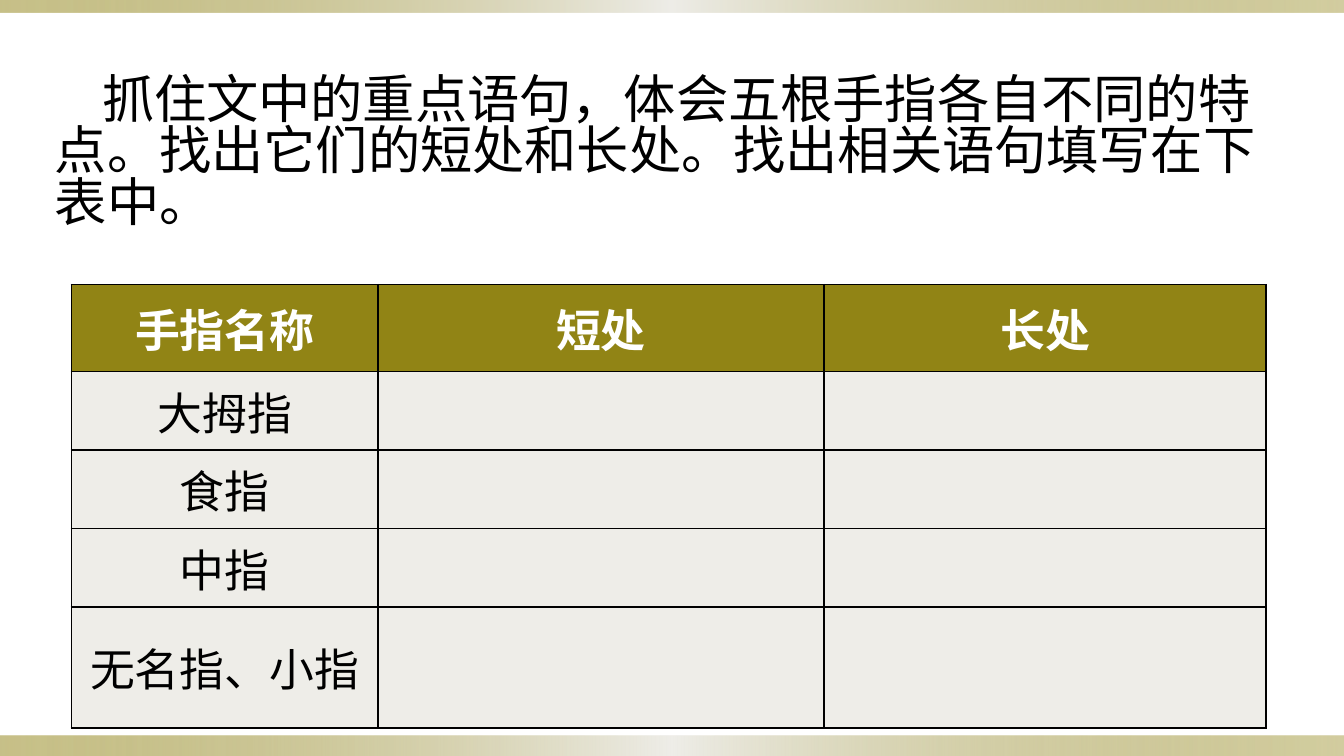
from pptx import Presentation
from pptx.dml.color import RGBColor
from pptx.enum.shapes import MSO_SHAPE as Shape
from pptx.enum.text import MSO_ANCHOR as Anchor, PP_ALIGN as Align
from pptx.oxml import parse_xml
from pptx.oxml.ns import nsdecls
from pptx.util import Cm, Pt

COLORS = {"olive": "918415", "pale": "EEEDE8", "ink": "000000", "white": "FFFFFF"}
CJK_FONT = "Noto Sans CJK SC"
TABLE_FONT = "Karla"
PAGE_WIDTH, PAGE_HEIGHT = 25.4, 14.29

TASK = "抓住文中的重点语句，体会五根手指各自不同的特点。找出它们的短处和长处。找出相关语句填写在下表中。"
ROWS = [
    ["手指名称", "短处", "长处"],
    ["大拇指", "", ""],
    ["食指", "", ""],
    ["中指", "", ""],
    ["无名指、小指", "", ""],
]
COLUMN_WIDTHS = [5.79, 8.43, 8.36]
ROW_HEIGHTS = [1.64, 1.48, 1.48, 1.48, 2.29]


def write_text(para, text, size=24, font=CJK_FONT, color="ink", bold=False,
               align=Align.LEFT, spacing=None):
    para.alignment = align
    if spacing:
        para.line_spacing = spacing
    span = para.add_run()
    span.text = text
    span.font.size = Pt(size)
    span.font.name = font
    span.font.bold = bold
    span.font.color.rgb = RGBColor.from_string(COLORS[color])
    span.font._element.append(
        parse_xml(f'<a:ea {nsdecls("a")} typeface="{CJK_FONT}"/>'))


class SlideBuilder:
    def __init__(self, page):
        self.page = page
        self.border_color = COLORS["ink"]
        self.border_width = Pt(1)

    def band(self, top, height):
        """Full-width bar that fades to pale in the middle."""
        bar = self.page.shapes.add_shape(
            Shape.RECTANGLE, 0, Cm(top), Cm(PAGE_WIDTH), Cm(height))
        bar.shadow.inherit = False
        bar.line.fill.background()
        bar.fill.background()
        stops = "".join(
            f'<a:gs pos="{place * 1000}"><a:srgbClr val="{COLORS[color]}">'
            f'<a:alpha val="{alpha * 1000}"/></a:srgbClr></a:gs>'
            for place, color, alpha in
            [(0, "olive", 50), (50, "pale", 100), (100, "olive", 40)])
        gradient = parse_xml(
            f'<a:gradFill {nsdecls("a")} rotWithShape="1"><a:gsLst>{stops}</a:gsLst>'
            '<a:lin ang="0" scaled="0"/></a:gradFill>')
        properties = bar._element.spPr
        properties.replace(properties.find("{*}noFill"), gradient)

    def paragraph_box(self, text, left, top, width, height, indent):
        box = self.page.shapes.add_textbox(Cm(left), Cm(top), Cm(width), Cm(height))
        frame = box.text_frame
        frame.word_wrap = True
        frame.margin_top, frame.margin_bottom = Cm(0.24), 0
        para = frame.paragraphs[0]
        para._p.get_or_add_pPr().set("indent", str(Cm(indent)))
        write_text(para, text, size=28, spacing=0.82)

    def table(self, rows, left, top, widths, heights):
        grid = self.page.shapes.add_table(
            len(rows), len(widths), Cm(left), Cm(top),
            Cm(sum(widths)), Cm(sum(heights))).table
        for column, width in zip(grid.columns, widths):
            column.width = Cm(width)
        for r, (texts, height) in enumerate(zip(rows, heights)):
            grid.rows[r].height = Cm(height)
            for c, text in enumerate(texts):
                self.cell(grid.cell(r, c), text, header=r == 0)

    def cell(self, cell, text, header):
        cell.vertical_anchor = Anchor.MIDDLE
        cell.fill.solid()
        cell.fill.fore_color.rgb = RGBColor.from_string(
            COLORS["olive" if header else "pale"])
        if text:
            write_text(cell.text_frame.paragraphs[0], text, font=TABLE_FONT,
                       color="white" if header else "ink", bold=header,
                       align=Align.CENTER)
        properties = cell._tc.get_or_add_tcPr()
        for order, side in enumerate(["lnL", "lnR", "lnT", "lnB"]):
            properties.insert(order, parse_xml(
                f'<a:{side} {nsdecls("a")} w="{self.border_width}"><a:solidFill>'
                f'<a:srgbClr val="{self.border_color}"/></a:solidFill></a:{side}>'))


def main():
    deck = Presentation()
    deck.slide_width, deck.slide_height = Cm(PAGE_WIDTH), Cm(PAGE_HEIGHT)
    builder = SlideBuilder(deck.slides.add_slide(deck.slide_layouts[6]))

    # Bands along the bottom and top edges
    builder.band(13.91, 0.38)
    builder.band(0, 0.23)

    # Table of fingers
    builder.table(ROWS, 1.35, 5.38, COLUMN_WIDTHS, ROW_HEIGHTS)

    # Task
    builder.paragraph_box(TASK, 0.79, 1.22, 23.6, 3.84, indent=0.89)

    deck.save("out.pptx")


if __name__ == "__main__":
    main()
